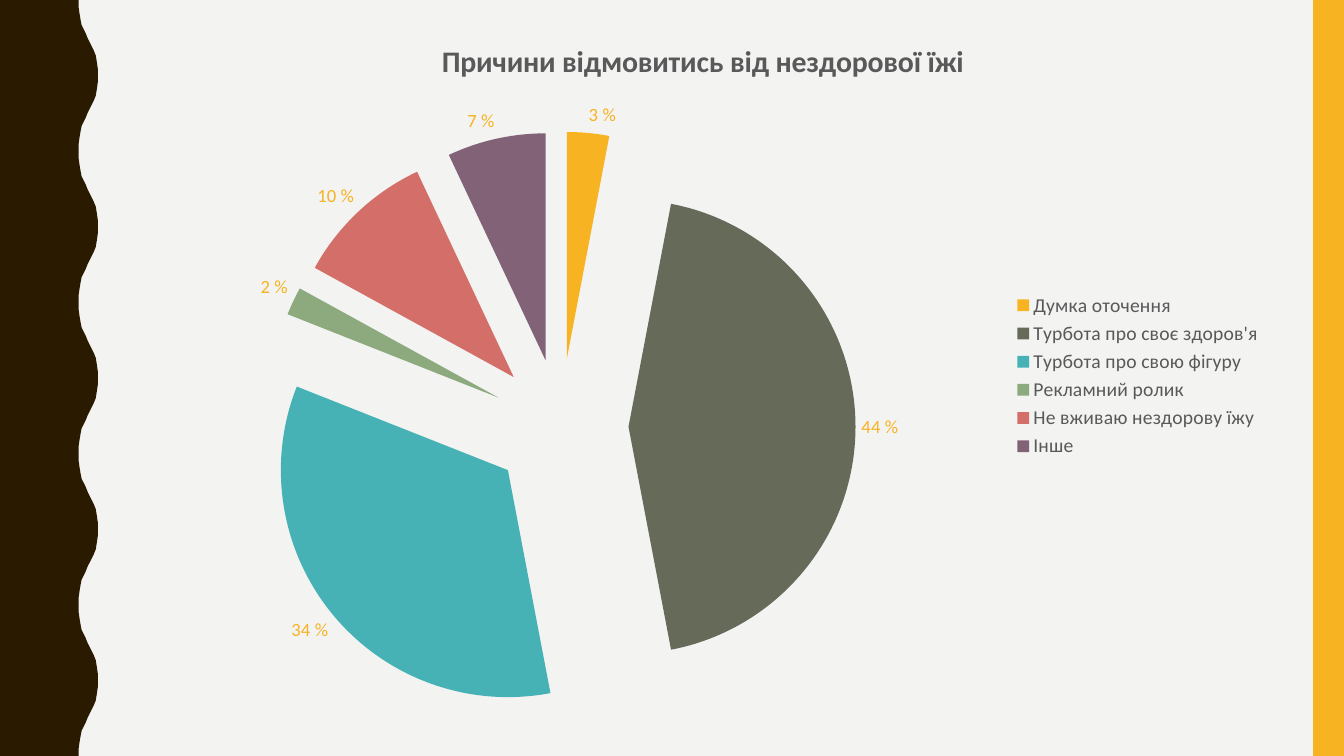
from lxml.etree import SubElement as Sub, Element as Elem
from pptx import Presentation
from pptx.chart.data import CategoryChartData as Data
from pptx.dml.color import RGBColor as Rgb
from pptx.enum.chart import XL_CHART_TYPE as Kind
from pptx.enum.chart import XL_LABEL_POSITION as Spot
from pptx.enum.chart import XL_LEGEND_POSITION as Side
from pptx.enum.shapes import MSO_SHAPE as Form
from pptx.oxml.ns import qn
from pptx.util import Inches, Pt

WIDE, HIGH = 13.33, 7.5
FACE = "Calibri"
HUES = {"paper": "F3F3F2", "wood": "2A1A00", "gold": "F8B323", "text": "595959"}
TITLE = "Причини відмовитись від нездорової їжі"
PARTS = [
    ("Думка оточення", 3, "F8B323"),
    ("Турбота про своє здоров'я", 44, "656A59"),
    ("Турбота про свою фігуру", 34, "46B2B5"),
    ("Рекламний ролик", 2, "8CAA7E"),
    ("Не вживаю нездорову їжу", 10, "D36F68"),
    ("Інше", 7, "826276"),
]
WAVES = 5
# Half of one wave in hundredths of an inch, from trough to crest
CURVE = [(78, 0), (78, 7), (79, 14), (80, 20), (81, 25), (83, 29), (85, 33),
         (87, 38), (89, 42), (91, 46), (93, 50), (95, 55), (96, 61), (97, 68),
         (97, 75)]


def area(left, top, wide, high):
    """Turn shares of the slide into lengths."""
    return (Inches(left * WIDE), Inches(top * HIGH),
            Inches(wide * WIDE), Inches(high * HIGH))


def paint(shape, hue):
    shape.shadow.inherit = False
    shape.fill.solid()
    shape.fill.fore_color.rgb = Rgb.from_string(HUES[hue])
    shape.line.fill.background()


def style(font, size, hue, bold=False):
    font.name, font.size, font.bold = FACE, Pt(size), bold
    font.color.rgb = Rgb.from_string(HUES[hue])


def add_wave(slide):
    step = HIGH * 100 / WAVES
    wave = CURVE + [(x, step - y) for x, y in CURVE[-2::-1]]
    edge = [(x, y + n * step) for n in range(WAVES) for x, y in wave]
    pen = slide.shapes.build_freeform(0, 0, scale=Inches(0.01))
    pen.add_line_segments(edge + [(0, HIGH * 100)], close=True)
    paint(pen.convert_to_shape(), "wood")


def add_band(slide, *box):
    paint(slide.shapes.add_shape(Form.RECTANGLE, *area(*box)), "gold")


def place_plot(chart, **box):
    """Fix the plot at shares of the chart's frame."""
    plot = chart._chartSpace.find(".//" + qn("c:plotArea"))
    for old in plot.findall(qn("c:layout")):
        plot.remove(old)
    frame = Elem(qn("c:layout"))
    plot.insert(0, frame)
    rule = Sub(frame, qn("c:manualLayout"))
    marks = {"layoutTarget": "inner", "xMode": "edge", "yMode": "edge", **box}
    for name, val in marks.items():
        Sub(rule, qn("c:" + name)).set("val", str(val))


def fill_parts(run, burst):
    for n, (_, _, hue) in enumerate(PARTS):
        fill = run.points[n].format.fill
        fill.solid()
        fill.fore_color.rgb = Rgb.from_string(hue)
    gap = Elem(qn("c:explosion"))
    gap.set("val", str(burst))
    run._element.find(qn("c:dPt")).addprevious(gap)


def add_pie(slide, *box):
    names, vals, _ = zip(*PARTS)
    data = Data()
    data.categories = names
    data.add_series(TITLE, vals)
    chart = slide.shapes.add_chart(Kind.PIE, *area(*box), data).chart
    chart.font.name, chart.font.size = FACE, Pt(10)

    chart.has_title = True
    head = chart.chart_title.text_frame.paragraphs[0].add_run()
    head.text = TITLE
    style(head.font, 21.3, "text", True)
    chart.chart_title.include_in_layout = False

    chart.has_legend = True
    chart.legend.position = Side.RIGHT
    chart.legend.include_in_layout = False
    style(chart.legend.font, 14, "text")

    plot = chart.plots[0]
    plot.vary_by_categories = True
    fill_parts(plot.series[0], 30)
    tags = plot.series[0].data_labels
    tags.show_value = True
    tags.number_format = '0" %"'
    tags.number_format_is_linked = False
    tags.position = Spot.OUTSIDE_END
    style(tags.font, 13.3, "gold")
    place_plot(chart, x=0.116, y=0.161, w=0.518, h=0.82)


def main():
    deck = Presentation()
    deck.slide_width, deck.slide_height = Inches(WIDE), Inches(HIGH)
    slide = deck.slides.add_slide(deck.slide_layouts[6])
    back = slide.background.fill
    back.solid()
    back.fore_color.rgb = Rgb.from_string(HUES["paper"])
    add_wave(slide)
    add_band(slide, 0.977, 0, 0.023, 1)
    add_pie(slide, 0.099, 0.021, 0.848, 0.952)
    deck.save("out.pptx")


if __name__ == "__main__":
    main()
